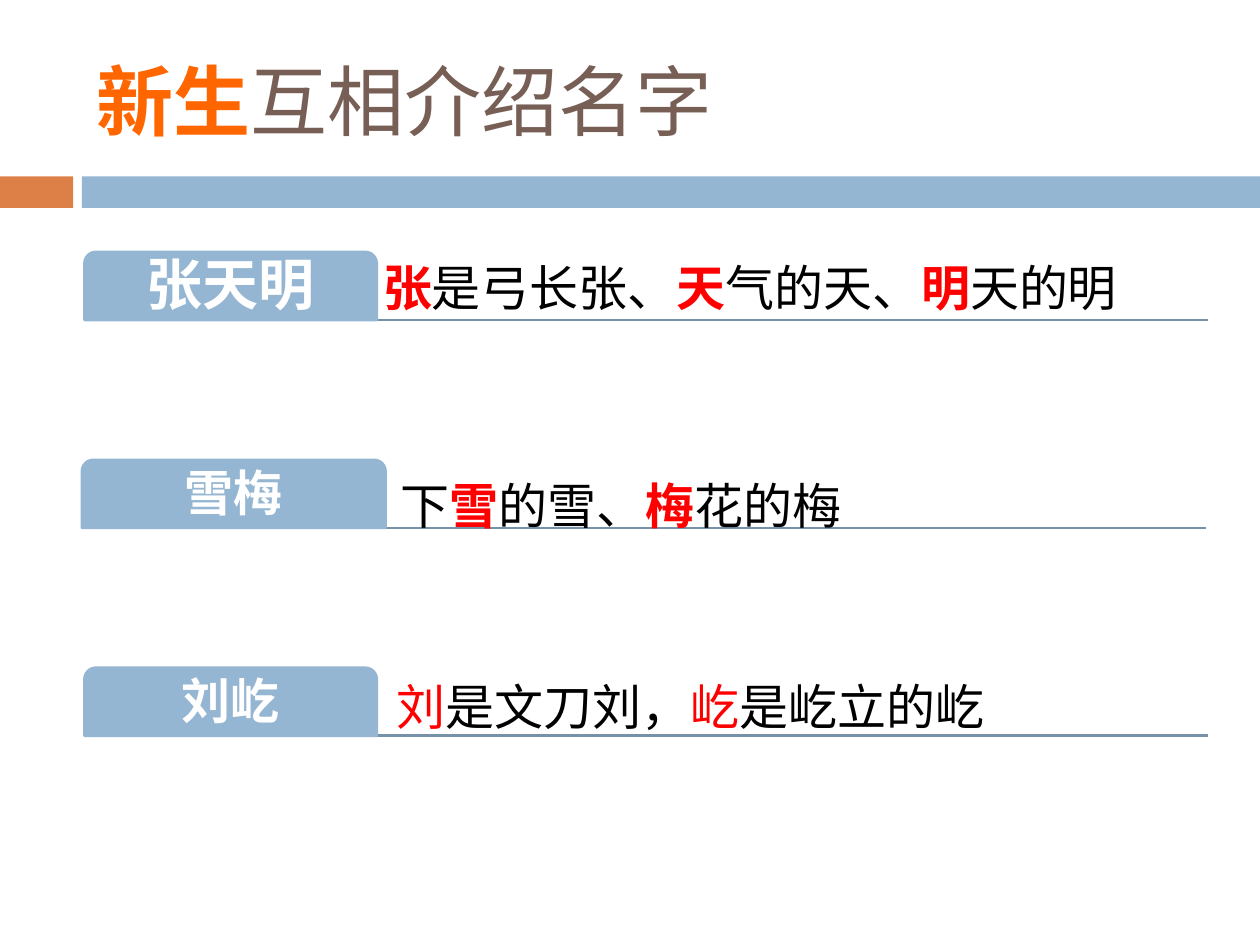
from pptx import Presentation
from pptx.dml.color import RGBColor
from pptx.enum import shapes, text
from pptx.oxml import ns
from pptx.util import Inches, Pt
from lxml import etree

BLUE = RGBColor(0x94, 0xB6, 0xD2)
RUST = RGBColor(0xDD, 0x80, 0x47)
RULE = RGBColor(0x77, 0x92, 0xA8)
ORANGE = RGBColor(0xFF, 0x66, 0x00)
BROWN = RGBColor(0x77, 0x5F, 0x55)
RED = RGBColor(0xFF, 0, 0)
BLACK = RGBColor(0, 0, 0)
WHITE = RGBColor(0xFF, 0xFF, 0xFF)
FONT = "Cabin"
KIND = shapes.MSO_SHAPE

TITLE = [("新生", ORANGE, True), ("互相介绍名字", BROWN, False)]
BANDS = [(0, 0.58, RUST), (0.65, 9.35, BLUE)]
ROWS = [
    dict(name="张天明", size=32, left=0.67, tab=2.32, start=3.04, mid=2.28, runs=[
        ("张", RED, True), ("是弓长张、", BLACK, False),
        ("天", RED, True), ("气的天、", BLACK, False),
        ("明", RED, True), ("天的明", BLACK, False)]),
    dict(name="雪梅", size=28, left=0.65, tab=2.41, start=3.18, mid=4.01, runs=[
        ("下", BLACK, False), ("雪", RED, True), ("的雪、", BLACK, False),
        ("梅", RED, True), ("花的梅", BLACK, False)]),
    dict(name="刘屹", size=28, left=0.67, tab=2.32, start=3.15, mid=5.6, runs=[
        ("刘", RED, False), ("是文刀刘，", BLACK, False),
        ("屹", RED, False), ("是屹立的屹", BLACK, False)]),
]
TOP, STEP, HIGH = 2, 1.65, 0.54
WIDE, RIGHT = 8.92, 9.59


def block(slide, kind, box, fill):
    shape = slide.shapes.add_shape(kind, *map(Inches, box))
    shape.shadow.inherit = False
    shape.fill.solid()
    shape.fill.fore_color.rgb = fill
    shape.line.fill.background()
    return shape


def write(shape, runs, size, inset=0):
    frame = shape.text_frame
    frame.word_wrap = True
    frame.vertical_anchor = text.MSO_ANCHOR.MIDDLE
    frame.margin_left = frame.margin_right = Inches(inset)
    frame.margin_top = frame.margin_bottom = 0
    para = frame.paragraphs[0]
    para.font.size = Pt(size)
    para.font.name = FONT
    for words, color, bold in runs:
        run = para.add_run()
        run.text = words
        run.font.color.rgb = color
        run.font.bold = bold
    return para


def label(slide, box, runs, size, inset=0):
    write(slide.shapes.add_textbox(*map(Inches, box)), runs, size, inset)


def rule(slide, left, y):
    ends = map(Inches, (left, y, left + WIDE, y))
    line = slide.shapes.add_connector(shapes.MSO_CONNECTOR.STRAIGHT, *ends)
    line.line.color.rgb = RULE
    line.line.width = Pt(1.5)
    etree.SubElement(line._element.spPr, ns.qn("a:effectLst"))


def row(slide, top, item):
    left = item["left"]
    rule(slide, left, top + HIGH)
    tab = block(slide, KIND.ROUND_2_SAME_RECTANGLE,
                (left, top, item["tab"], HIGH), BLUE)
    tab.line.color.rgb = BLUE
    tab.line.width = Pt(1.5)
    para = write(tab, [(item["name"], WHITE, True)], item["size"])
    para.alignment = text.PP_ALIGN.CENTER
    para.line_spacing = 0.9
    start = item["start"]
    label(slide, (start, item["mid"] - HIGH / 2, RIGHT - start, HIGH),
          item["runs"], 28)


def main():
    deck = Presentation()
    deck.slide_width, deck.slide_height = Inches(10), Inches(7.5)
    slide = deck.slides.add_slide(deck.slide_layouts[6])
    for left, wide, fill in BANDS:
        block(slide, KIND.RECTANGLE, (left, 1.4, wide, 0.25), fill)
    label(slide, (0.67, 0.25, WIDE, 1.08), TITLE, 44, 0.1)
    for i, item in enumerate(ROWS):
        row(slide, TOP + i * STEP, item)
    deck.save("out.pptx")


if __name__ == "__main__":
    main()
